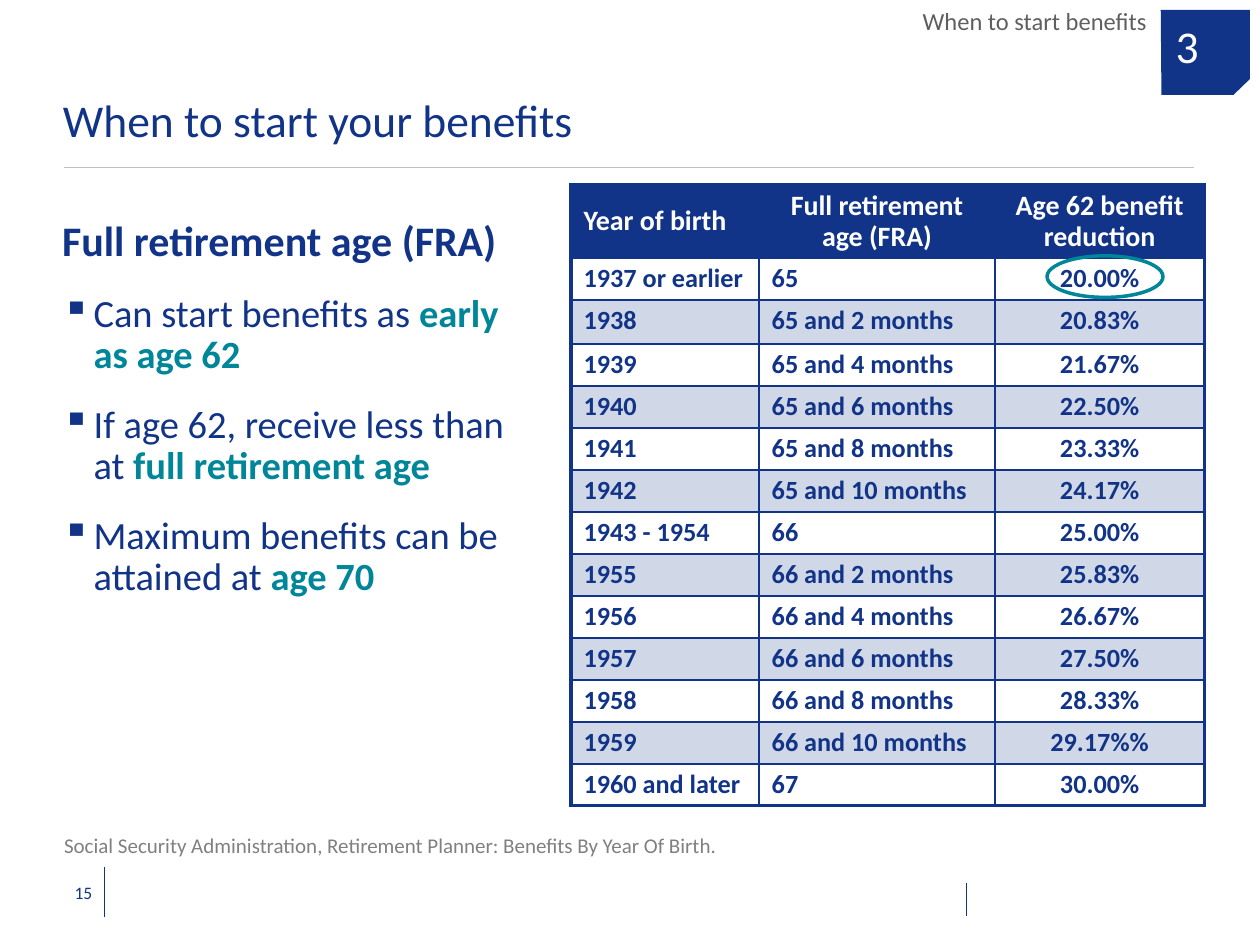
from dataclasses import dataclass

from lxml import etree
from pptx import Presentation
from pptx.dml.color import RGBColor
from pptx.enum.shapes import MSO_CONNECTOR, MSO_SHAPE
from pptx.enum.text import MSO_ANCHOR, PP_ALIGN
from pptx.oxml.ns import qn
from pptx.util import Pt

LEFT, CENTER, RIGHT = PP_ALIGN.LEFT, PP_ALIGN.CENTER, PP_ALIGN.RIGHT
TOP, MIDDLE, BOTTOM = MSO_ANCHOR.TOP, MSO_ANCHOR.MIDDLE, MSO_ANCHOR.BOTTOM
STRAIGHT, OVAL = MSO_CONNECTOR.STRAIGHT, MSO_SHAPE.OVAL

NAVY = RGBColor(0x11, 0x33, 0x88)
TEAL = RGBColor(0x00, 0x86, 0x99)
PALE_BLUE = RGBColor(0xD0, 0xD8, 0xE8)
SILVER = RGBColor(0xC0, 0xC0, 0xC0)
GRAY = RGBColor(0x80, 0x80, 0x80)
DARK_GRAY = RGBColor(0x5F, 0x5F, 0x5F)
WHITE = RGBColor(0xFF, 0xFF, 0xFF)

FONT = "Calibri"
NO_INSET = (0, 0, 0, 0)
CELL_INSET = (7.2, 3.6, 7.2, 3.6)


@dataclass
class Label:
    text: str
    box: tuple[float, float, float, float]
    size: float
    color: RGBColor
    align: PP_ALIGN = LEFT
    anchor: MSO_ANCHOR = TOP
    inset: tuple[float, float, float, float] = NO_INSET
    line_spacing: float = 1.0


@dataclass
class Rule:
    start: tuple[float, float]
    end: tuple[float, float]
    color: RGBColor


@dataclass
class Bullet:
    plain: str
    emphasis: tuple[str, ...]  # one entry per line


RULES = [
    Rule((59.76, 495.36), (59.76, 524.16), NAVY),
    Rule((36.72, 95.9), (682.56, 95.9), SILVER),
    Rule((552.24, 504.72), (552.24, 523.44), NAVY),
]
LABELS = [
    Label("15", (5.76, 495.36, 54, 28.8), 10, NAVY, RIGHT, MIDDLE, CELL_INSET),
    Label("When to start your benefits", (36, 20.88, 606.96, 63.36), 26, NAVY,
          anchor=BOTTOM, line_spacing=0.9),
    Label("When to start benefits", (349.2, 3.6, 313.2, 17.28), 14, DARK_GRAY, RIGHT,
          inset=(7.2, 0, 7.2, 0)),
    Label("3", (671.76, 13.68, 40.32, 37.44), 26, WHITE, line_spacing=0.9),
    Label("Social Security Administration, Retirement Planner: Benefits By Year Of Birth.",
          (29.52, 472.32, 390.24, 22.32), 12, GRAY, inset=CELL_INSET),
]
BULLETS = [
    Bullet("Can start benefits as ", ("early ", "as age 62")),
    Bullet("If age 62, receive less than at ", ("full retirement age",)),
    Bullet("Maximum benefits can be attained at ", ("age 70",)),
]
BADGE_OUTLINE = [(663.7, 54.2), (704.9, 54.2), (714.2, 45.2), (714.2, 5.7), (663.3, 5.7)]

TABLE_ROWS = [
    ("Year of birth", "Full retirement age (FRA)", "Age 62 benefit reduction"),
    ("1937 or earlier", "65", "20.00%"),
    ("1938", "65 and 2 months", "20.83%"),
    ("1939", "65 and 4 months", "21.67%"),
    ("1940", "65 and 6 months", "22.50%"),
    ("1941", "65 and 8 months", "23.33%"),
    ("1942", "65 and 10 months", "24.17%"),
    ("1943 - 1954", "66", "25.00%"),
    ("1955", "66 and 2 months", "25.83%"),
    ("1956", "66 and 4 months", "26.67%"),
    ("1957", "66 and 6 months", "27.50%"),
    ("1958", "66 and 8 months", "28.33%"),
    ("1959", "66 and 10 months", "29.17%%"),
    ("1960 and later", "67", "30.00%"),
]
COLUMN_WIDTHS = (107.5, 134.75, 119.75)
ROW_HEIGHTS = [41.76, 24, 25.2] + [24] * (len(TABLE_ROWS) - 3)


def set_attributes(target, values: dict) -> None:
    for name, value in values.items():
        setattr(target, name, value)


def add_run(paragraph, text: str, size: float, color: RGBColor, bold: bool = False) -> None:
    run = paragraph.add_run()
    run.text = text
    set_attributes(run.font, {"name": FONT, "size": Pt(size), "bold": bold})
    run.font.color.rgb = color


def set_insets(target, inset: tuple) -> None:
    sides = ("margin_left", "margin_top", "margin_right", "margin_bottom")
    set_attributes(target, {side: Pt(value) for side, value in zip(sides, inset)})


def add_text_frame(slide, box: tuple, inset: tuple, anchor: MSO_ANCHOR):
    frame = slide.shapes.add_textbox(*map(Pt, box)).text_frame
    set_attributes(frame, {"word_wrap": True, "vertical_anchor": anchor})
    set_insets(frame, inset)
    return frame


def add_label(slide, label: Label) -> None:
    paragraph = add_text_frame(slide, label.box, label.inset, label.anchor).paragraphs[0]
    set_attributes(paragraph, {"alignment": label.align, "line_spacing": label.line_spacing})
    add_run(paragraph, label.text, label.size, label.color)


def add_rule(slide, rule: Rule) -> None:
    connector = slide.shapes.add_connector(STRAIGHT, *map(Pt, rule.start + rule.end))
    connector.line.color.rgb = rule.color
    connector.line.width = Pt(0.75)
    etree.SubElement(connector._element.spPr, qn("a:effectLst"))


def add_bullet(frame, bullet: Bullet) -> None:
    paragraph = frame.add_paragraph()
    properties = paragraph._p.get_or_add_pPr()
    properties.set("marL", str(Pt(18)))
    properties.set("indent", str(-Pt(18)))
    color = etree.SubElement(properties, qn("a:buClr"))
    etree.SubElement(color, qn("a:srgbClr"), val=str(NAVY))
    etree.SubElement(properties, qn("a:buChar"), char="▪")
    set_attributes(paragraph, {"level": 1, "line_spacing": 0.9,
                               "space_before": Pt(12), "space_after": Pt(4)})
    add_run(paragraph, bullet.plain, 22, NAVY)
    for index, line in enumerate(bullet.emphasis):
        if index:
            paragraph.add_line_break()
        add_run(paragraph, line, 22, TEAL, True)


def set_borders(cell, widths: dict[str, float]) -> None:
    properties = cell._tc.get_or_add_tcPr()
    for index, (side, width) in enumerate(widths.items()):
        border = etree.Element(qn(f"a:{side}"), w=str(Pt(width)))
        fill = etree.SubElement(border, qn("a:solidFill"))
        etree.SubElement(fill, qn("a:srgbClr"), val=str(NAVY))
        properties.insert(index, border)


def add_benefit_table(slide) -> None:
    row_count, column_count = len(TABLE_ROWS), len(COLUMN_WIDTHS)
    table = slide.shapes.add_table(
        row_count, column_count, Pt(326.3), Pt(105.7),
        Pt(sum(COLUMN_WIDTHS)), Pt(sum(ROW_HEIGHTS))).table
    table.horz_banding = False
    for column, width in zip(table.columns, COLUMN_WIDTHS):
        column.width = Pt(width)
    for row_index, texts in enumerate(TABLE_ROWS):
        table.rows[row_index].height = Pt(ROW_HEIGHTS[row_index])
        header = row_index == 0
        background = NAVY if header else WHITE if row_index % 2 else PALE_BLUE
        for column_index, text in enumerate(texts):
            cell = table.cell(row_index, column_index)
            cell.fill.solid()
            cell.fill.fore_color.rgb = background
            cell.vertical_anchor = MIDDLE if header else TOP
            set_insets(cell, CELL_INSET)
            paragraph = cell.text_frame.paragraphs[0]
            centered = column_index == 2 or (header and column_index == 1)
            set_attributes(paragraph, {"alignment": CENTER if centered else LEFT,
                                       "line_spacing": 0.9})
            add_run(paragraph, text, 16 if header else 15, WHITE if header else NAVY, True)
            outer_edges = {"lnL": column_index == 0, "lnR": column_index == column_count - 1,
                           "lnT": header, "lnB": row_index == row_count - 1}
            set_borders(cell, {side: 2.25 if outer else 1
                               for side, outer in outer_edges.items()})


def main() -> None:
    presentation = Presentation()
    set_attributes(presentation, {"slide_width": Pt(720), "slide_height": Pt(540)})
    slide = presentation.slides.add_slide(presentation.slide_layouts[6])

    # Divider lines
    for rule in RULES:
        add_rule(slide, rule)

    # Section badge with a cut corner
    points = [(Pt(x), Pt(y)) for x, y in BADGE_OUTLINE]
    builder = slide.shapes.build_freeform(*points[0], scale=1.0)
    builder.add_line_segments(points[1:], close=True)
    badge = builder.convert_to_shape()
    badge.shadow.inherit = False
    badge.fill.solid()
    badge.fill.fore_color.rgb = NAVY
    badge.line.fill.background()

    # Title, section, page number and source
    for label in LABELS:
        add_label(slide, label)

    # Key points
    frame = add_text_frame(slide, (35.5, 126, 274.32, 308.88), NO_INSET, TOP)
    heading = frame.paragraphs[0]
    set_attributes(heading, {"line_spacing": 0.9, "space_after": Pt(4)})
    add_run(heading, "Full retirement age (FRA)", 24, NAVY, True)
    for bullet in BULLETS:
        add_bullet(frame, bullet)

    # Benefit table and the ring around its first reduction
    add_benefit_table(slide)
    ring = slide.shapes.add_shape(OVAL, Pt(598.3), Pt(146.2), Pt(66.24), Pt(23.76))
    ring.shadow.inherit = False
    ring.fill.background()
    ring.line.color.rgb = TEAL
    ring.line.width = Pt(2)

    presentation.save("out.pptx")


if __name__ == "__main__":
    main()
